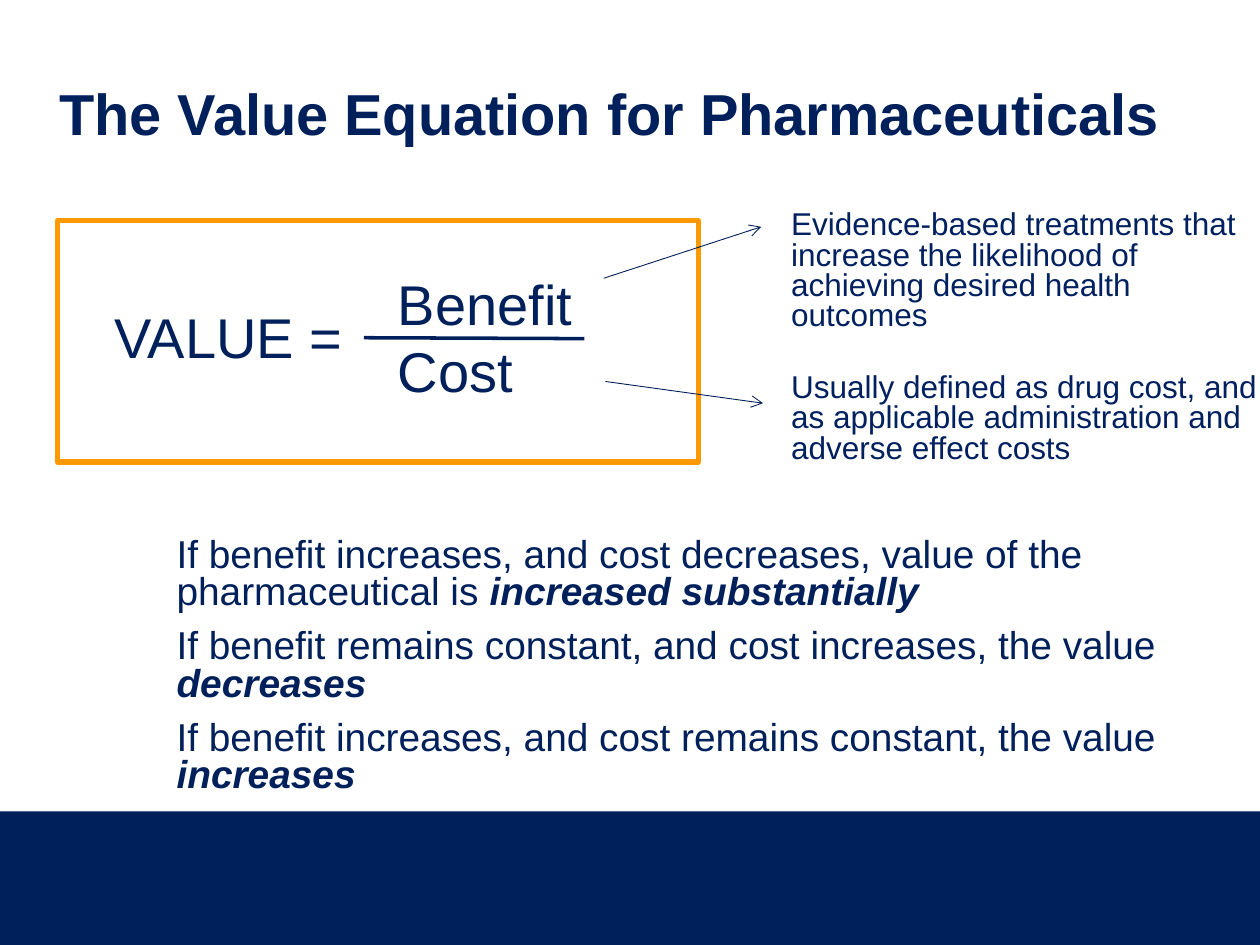
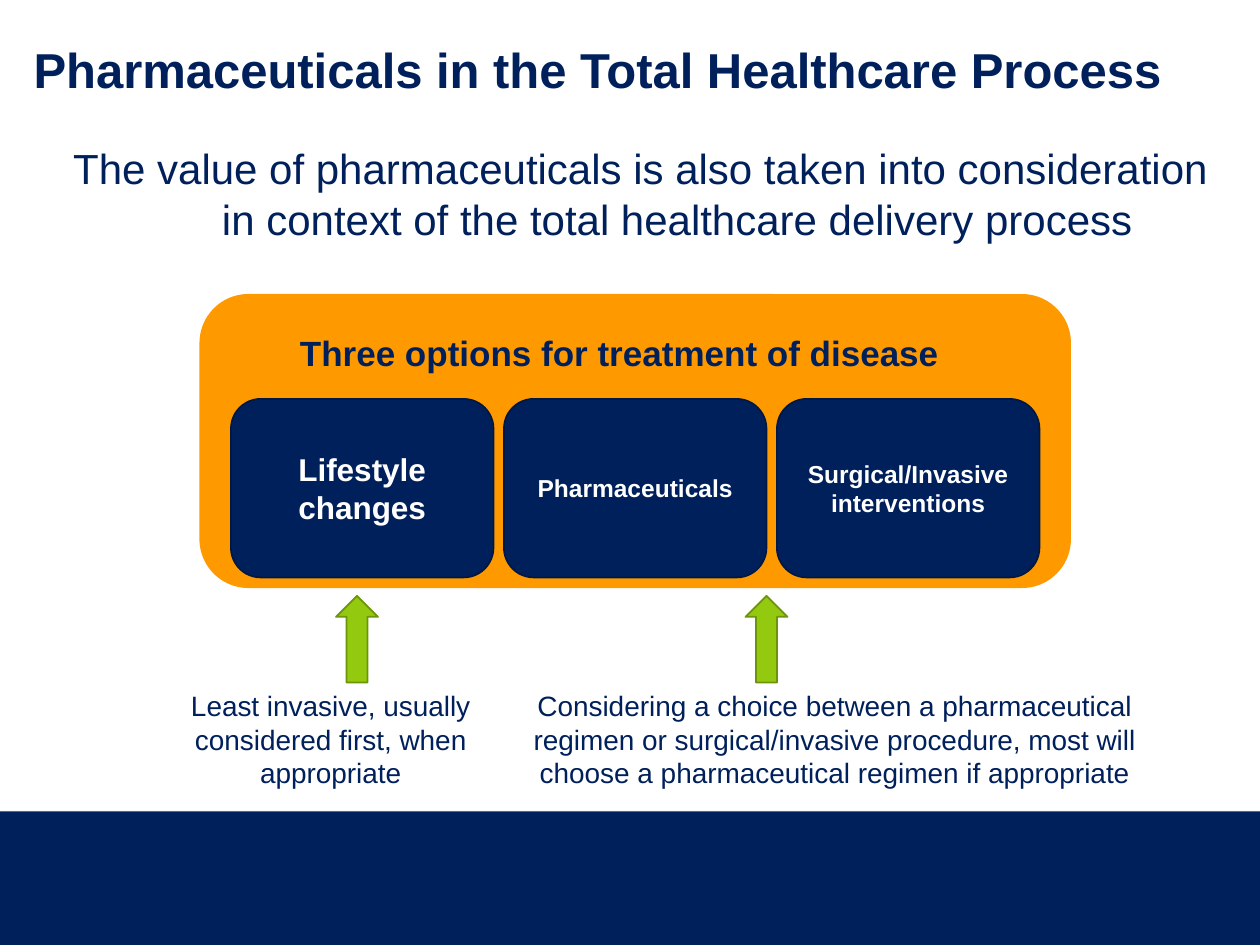
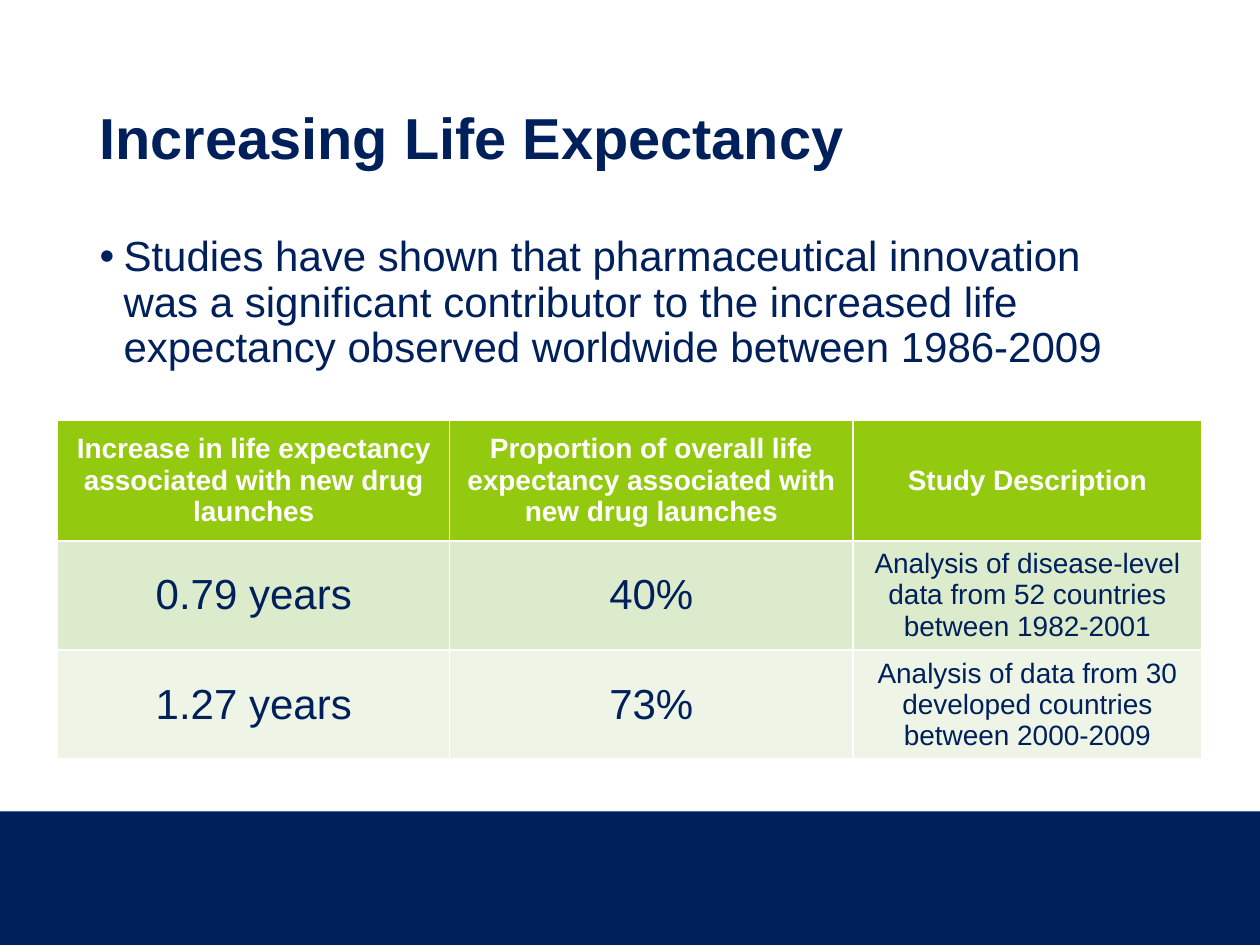
from dataclasses import dataclass
from lxml import etree
from pptx import Presentation
from pptx.dml.color import RGBColor
from pptx.enum.shapes import MSO_CONNECTOR, MSO_SHAPE
from pptx.enum.text import MSO_ANCHOR, MSO_AUTO_SIZE, PP_ALIGN
from pptx.oxml.ns import qn
from pptx.util import Pt

LEFT, MID = PP_ALIGN.LEFT, PP_ALIGN.CENTER
TOP, CENTRE = MSO_ANCHOR.TOP, MSO_ANCHOR.MIDDLE
RECT, ROUND = MSO_SHAPE.RECTANGLE, MSO_SHAPE.ROUNDED_RECTANGLE
ARROW = MSO_SHAPE.UP_ARROW
LINE = MSO_CONNECTOR.STRAIGHT


@dataclass(frozen=True)
class Theme:
    font: str = "Arial"
    navy: str = "00205B"
    edge: str = "001843"
    note: str = "002060"
    gold: str = "FF9900"
    green: str = "93C90E"
    moss: str = "6D950A"
    pale: str = "F8F8F8"
    white: str = "FFFFFF"
    rows: tuple = ("DCEBCC", "EEF5E7")
    title: float = 33
    sub: float = 28
    math: float = 32
    lead: float = 24
    rule: float = 22.2
    head: float = 20
    body: float = 18
    small: float = 16
    tiny: float = 14


T = Theme()

# Content; boxes are left, top, width, height in points
BANDS = [((0, 463, 720, 77), T.pale), ((0, 463.7, 720, 76.3), T.navy)]

VALUE = "The Value Equation for Pharmaceuticals"
RULES = [
    ("If benefit increases, and cost decreases, value of the pharmaceutical is ",
     "increased substantially"),
    ("If benefit remains constant, and cost increases, the value ", "decreases"),
    ("If benefit increases, and cost remains constant, the value ", "increases"),
]
TERMS = [((58.3, 169.2, 168, 46), ["VALUE ="]),
         ((220.3, 150.5, 168, 85), ["Benefit", "Cost"])]
NOTES = [
    "Evidence-based treatments that increase the likelihood of achieving "
    "desired health outcomes",
    "Usually defined as drug cost, and as applicable administration and "
    "adverse effect costs",
]
LINKS = [(345, 159, 435, 129.6), (346, 218, 436, 230.4)]

PROCESS = "Pharmaceuticals in the Total Healthcare Process"
INTRO = ("The value of pharmaceuticals is also taken into consideration "
         "in context of the total healthcare delivery process")
GROUP = "Three options for treatment of disease"
CARDS = [("Lifestyle changes", T.body), ("Pharmaceuticals", T.tiny),
         ("Surgical/Invasive interventions", T.tiny)]
HINTS = [
    (192, (102, 390, 174, 65.5),
     "Least invasive, usually considered first, when appropriate"),
    (426, (282, 390, 390, 65.5),
     "Considering a choice between a pharmaceutical regimen or "
     "surgical/invasive procedure, most will choose a pharmaceutical "
     "regimen if appropriate"),
]

LIFE = "Increasing Life Expectancy"
STUDY = ("Studies have shown that pharmaceutical innovation was a significant "
         "contributor to the increased life expectancy observed worldwide "
         "between 1986-2009")
COLS, ROWS = (224, 230.4, 199.4), (69, 62.4, 62.4)
CELLS = [
    ("Increase in life expectancy associated with new drug launches",
     "Proportion of overall life expectancy associated with new drug launches",
     "Study Description"),
    ("0.79 years", "40%",
     "Analysis of disease-level data from 52 countries between 1982-2001"),
    ("1.27 years", "73%",
     "Analysis of data from 30 developed countries between 2000-2009"),
]


# Helpers
def rgb(tint):
    return RGBColor.from_string(tint)


def pts(box):
    return [Pt(v) for v in box]


def style(para, size, tint=T.navy, bold=False, align=LEFT, lead=1.0, gap=0,
          after=0, dent=(0, 0), mark=None):
    """Format one paragraph; dent is the margin and first-line indent."""
    props = para._p.get_or_add_pPr()
    props.set("marL", str(Pt(dent[0])))
    props.set("indent", str(Pt(dent[1])))
    if mark:
        etree.SubElement(props, qn("a:buChar")).set("char", mark)
    else:
        etree.SubElement(props, qn("a:buNone"))
    para.alignment, para.line_spacing = align, lead
    para.space_before, para.space_after = Pt(gap), Pt(after)
    font = para.font
    font.name, font.size, font.bold = T.font, Pt(size), bold
    font.color.rgb = rgb(tint)


def write(frame, texts, size, anchor=TOP, gap=0, **look):
    """Fill a frame; a tuple is plain text and a stressed ending."""
    frame.word_wrap, frame.auto_size = True, MSO_AUTO_SIZE.NONE
    frame.vertical_anchor = anchor
    for i, text in enumerate(texts):
        para = frame.add_paragraph() if i else frame.paragraphs[0]
        parts = (text,) if isinstance(text, str) else text
        for j, part in enumerate(parts):
            run = para.add_run()
            run.text = part
            if j:
                run.font.bold = run.font.italic = True
        style(para, size, gap=gap if i else 0, **look)


def place(item, box):
    item.left, item.top, item.width, item.height = pts(box)
    return item.text_frame


def label(slide, box, texts, size, **look):
    write(slide.shapes.add_textbox(*pts(box)).text_frame, texts, size, **look)


def shape(slide, kind, box, fill=None, line=None, width=1):
    item = slide.shapes.add_shape(kind, *pts(box))
    item.shadow.inherit = False
    if fill:
        item.fill.solid()
        item.fill.fore_color.rgb = rgb(fill)
    else:
        item.fill.background()
    if line:
        item.line.color.rgb, item.line.width = rgb(line), Pt(width)
    else:
        item.line.fill.background()
    return item


def link(slide, ends, width, tip=False):
    item = slide.shapes.add_connector(LINE, *pts(ends))
    item.line.color.rgb, item.line.width = rgb(T.navy), Pt(width)
    if tip:
        etree.SubElement(item.line._get_or_add_ln(),
                         qn("a:tailEnd")).set("type", "arrow")
    etree.SubElement(item._element.spPr, qn("a:effectLst"))


def start(deck, layout, title, box, size=T.title):
    slide = deck.slides.add_slide(deck.slide_layouts[layout])
    write(place(slide.shapes.title, box), [title], size, CENTRE,
          bold=True, lead=0.9)
    return slide


def bands(deck, slide):
    """Draw the footer bands and hand them to the master."""
    tree = deck.slide_master.element.cSld.spTree
    for box, tint in BANDS:
        tree.append(shape(slide, RECT, box, tint).element)


# Slides
def value(deck):
    slide = start(deck, 1, VALUE, (26.6, 31, 666, 71.3))
    bands(deck, slide)
    write(place(slide.placeholders[1], (49.7, 304, 620.6, 153)), RULES,
          T.rule, lead=0.8, gap=3.8, after=6, dent=(44, 0))
    for box, texts in TERMS:
        label(slide, box, texts, T.math)
    link(slide, (208, 193, 334, 193.5), 2)
    shape(slide, RECT, (33, 126, 366, 138), line=T.gold, width=3)
    label(slide, (445, 117.4, 282, 165.6), NOTES, T.body,
          tint=T.note, lead=0.8, gap=23.8)
    for ends in LINKS:
        link(slide, ends, 0.5, tip=True)


def process(deck):
    slide = start(deck, 5, PROCESS, (12, 20, 684, 43), T.sub)
    shape(slide, ROUND, (114, 168, 498, 168), T.gold)
    label(slide, (24, 78, 684, 65.5), [INTRO], T.lead, align=MID,
          dent=(42, -42))
    wide, gap = 150, 6
    for i, (text, size) in enumerate(CARDS):
        card = shape(slide, ROUND, (132 + i * (wide + gap), 228, wide, 102),
                     T.navy, T.edge)
        write(card.text_frame, [text], size, CENTRE, tint=T.white,
              bold=True, align=MID)
    label(slide, (147, 186, 414, 31.5), [GROUP], T.head, bold=True, align=MID)
    for left, box, text in HINTS:
        shape(slide, ARROW, (left, 340.5, 24, 49.5), T.green, T.moss)
        label(slide, box, [text], T.small, align=MID)


def life(deck):
    slide = start(deck, 1, LIFE, (49.7, 28.5, 620.6, 104.4))
    write(place(slide.placeholders[1], (49.7, 131, 620.6, 307.5)), [STUDY],
          T.lead, lead=0.9, dent=(13.7, -13.7), mark="•")
    grid = slide.shapes.add_table(
        len(ROWS), len(COLS), *pts((33, 240, sum(COLS), sum(ROWS)))).table
    for col, wide in zip(grid.columns, COLS):
        col.width = Pt(wide)
    for i, (row, tall) in enumerate(zip(grid.rows, ROWS)):
        row.height = Pt(tall)
        for j, cell in enumerate(row.cells):
            cell.fill.solid()
            cell.fill.fore_color.rgb = rgb(T.rows[i - 1] if i else T.green)
            cell.vertical_anchor = CENTRE
            para = cell.text_frame.paragraphs[0]
            para.text = CELLS[i][j]
            style(para, T.lead if i and j < 2 else T.small,
                  T.navy if i else T.white, bold=not i, align=MID)


def main():
    deck = Presentation()
    deck.slide_width, deck.slide_height = Pt(720), Pt(540)
    for build in (value, process, life):
        build(deck)
    deck.save("out.pptx")


if __name__ == "__main__":
    main()
